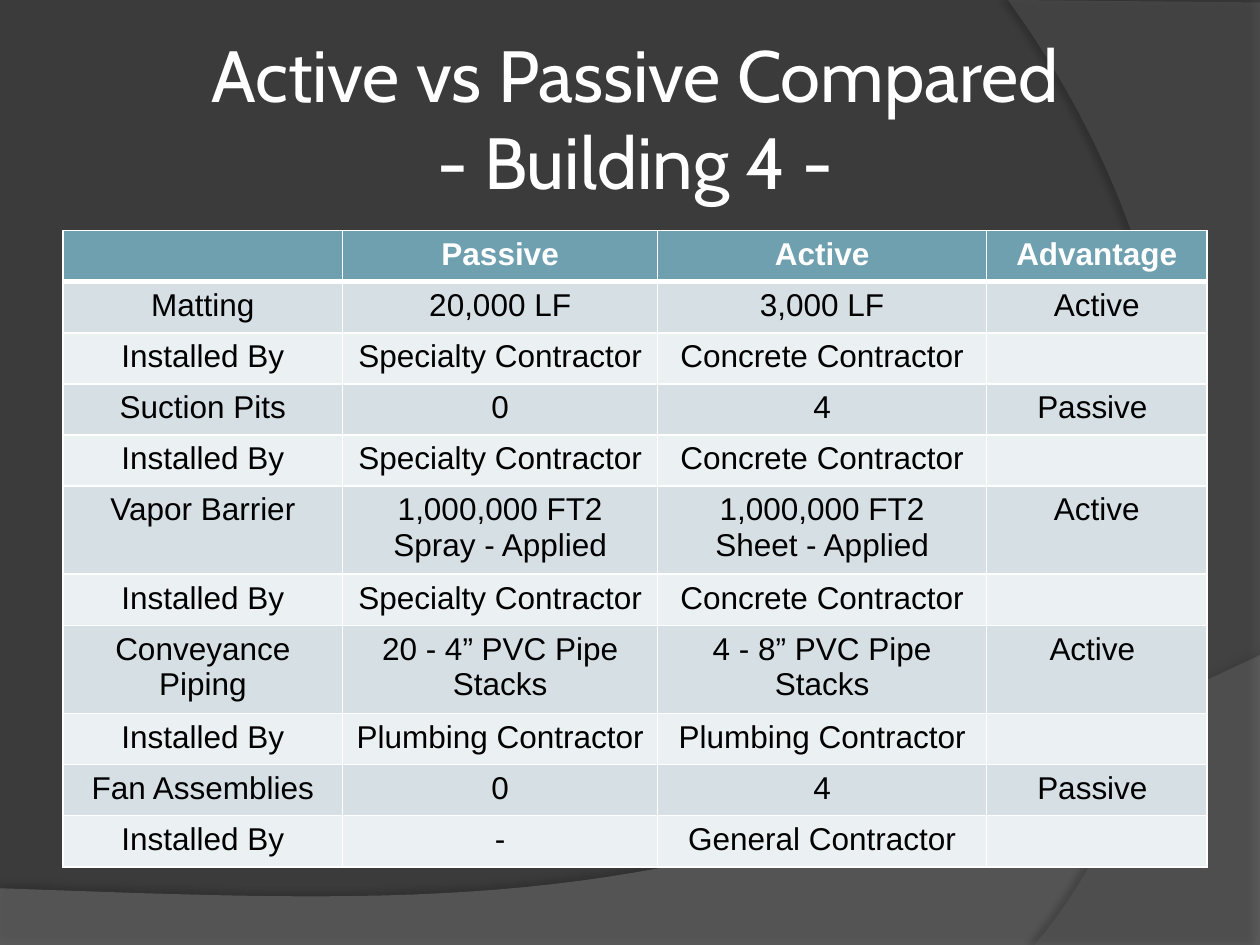
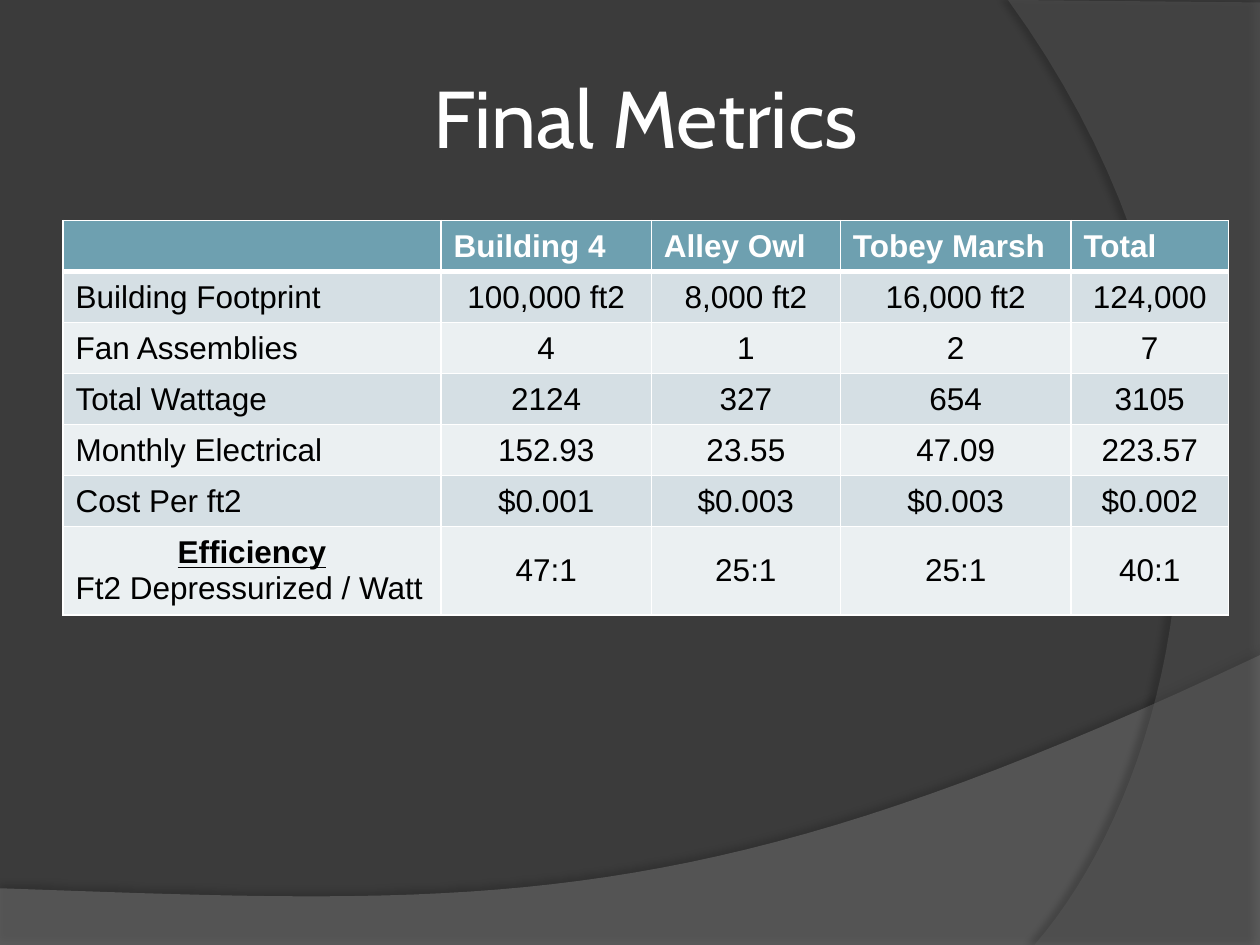
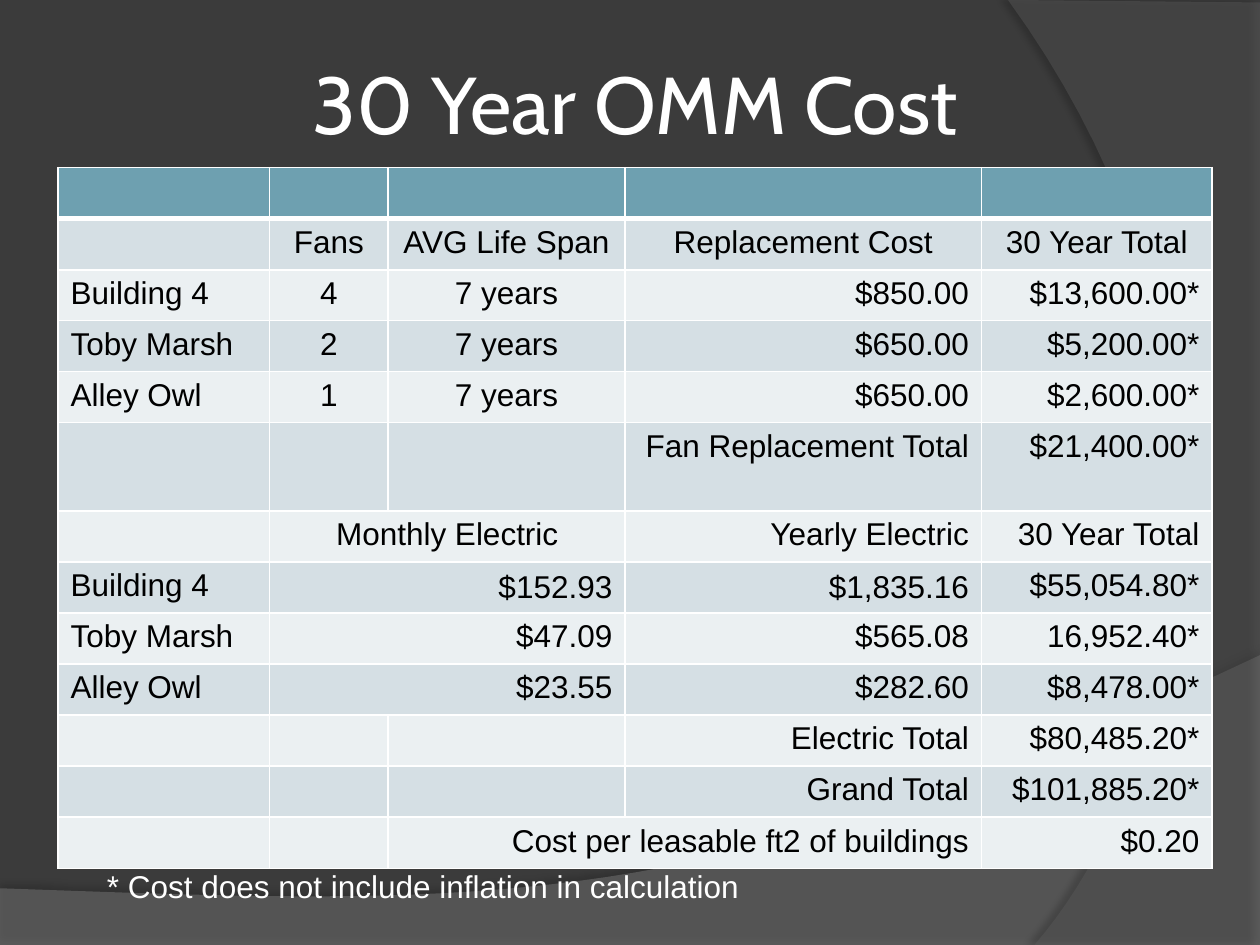
from dataclasses import dataclass

import pptx
import pptx.dml.color
import pptx.enum.text
import pptx.oxml
import pptx.oxml.ns
import pptx.util
from pptx.util import Inches

ALIGN = pptx.enum.text.PP_ALIGN
ANCHOR = pptx.enum.text.MSO_ANCHOR


@dataclass(frozen=True)
class Theme:
    background: str = "3B3B3B"
    lower_wave: str = "7F7F7F"
    side_wave: str = "5E5E5E"
    shadow: str = "000000"
    light_text: str = "FFFFFF"
    dark_text: str = "000000"
    header: str = "6EA0B0"
    bands: tuple = ("D5DFE4", "EBF0F2")
    border: str = "FFFFFF"
    thin_border: float = 1
    header_border: float = 3
    title_font: str = "Cabin"
    body_font: str = "Arial"
    title_size: float = 46
    long_title_size: float = 41.4
    body_size: float = 18
    tall_row: float = 0.7


THEME = Theme()

COMPARISON_ROWS = [
    ["", "Passive", "Active", "Advantage"],
    ["Matting", "20,000 LF", "3,000 LF", "Active"],
    ["Installed By", "Specialty Contractor", "Concrete Contractor", ""],
    ["Suction Pits", "0", "4", "Passive "],
    ["Installed By", "Specialty Contractor", "Concrete Contractor", ""],
    ["Vapor Barrier", "1,000,000 FT2\nSpray - Applied", "1,000,000 FT2\nSheet - Applied", "Active"],
    ["Installed By", "Specialty Contractor", "Concrete Contractor", ""],
    ["Conveyance Piping", "20 - 4” PVC Pipe Stacks", "4 - 8” PVC Pipe Stacks", "Active "],
    ["Installed By", "Plumbing Contractor", "Plumbing Contractor", ""],
    ["Fan Assemblies", "0", "4", "Passive "],
    ["Installed By", "-", "General Contractor", ""],
]

METRICS_ROWS = [
    ["", "Building 4", "Alley Owl", "Tobey Marsh", "Total"],
    ["Building Footprint", "100,000 ft2", "8,000 ft2", "16,000 ft2", "124,000"],
    ["Fan Assemblies", "4", "1", "2", "7"],
    ["Total Wattage", "2124", "327", "654", "3105"],
    ["Monthly Electrical", "152.93", "23.55", "47.09", "223.57"],
    ["Cost Per ft2", "$0.001", "$0.003", "$0.003", "$0.002"],
    ["", "47:1", "25:1", "25:1", "40:1"],
]

COST_ROWS = [
    ["", "", "", "", ""],
    ["", "Fans", "AVG Life Span", "Replacement Cost", "30 Year Total"],
    ["Building 4", "4", "7 years", "$850.00", "$13,600.00*"],
    ["Toby Marsh", "2", "7 years", "$650.00", "$5,200.00*"],
    ["Alley Owl", "1", "7 years", "$650.00", "$2,600.00*"],
    ["", "", "", "Fan Replacement Total", "$21,400.00*"],
    ["", "Monthly Electric", "", "Yearly Electric", "30 Year Total"],
    ["Building 4", "$152.93", "", "$1,835.16", "$55,054.80*"],
    ["Toby Marsh", "$47.09", "", "$565.08", "16,952.40*"],
    ["Alley Owl", "$23.55", "", "$282.60", "$8,478.00*"],
    ["", "", "", "Electric Total", "$80,485.20*"],
    ["", "", "", "Grand Total", "$101,885.20*"],
    ["", "", "Cost per leasable ft2 of buildings", "", "$0.20"],
]


def rgb(color):
    return pptx.dml.color.RGBColor.from_string(color)


def add_text(paragraph, text, color, size=THEME.body_size, font=THEME.body_font,
             bold=False, underline=False):
    """Add one run per line, with line breaks between them."""
    for index, line in enumerate(text.split("\n")):
        if index:
            paragraph.add_line_break()
        run = paragraph.add_run()
        run.text = line
        run.font.name = font
        run.font.size = pptx.util.Pt(size)
        run.font.bold = bold
        run.font.underline = underline
        run.font.color.rgb = rgb(color)


def curve_points(start, first_control, second_control, end, steps=40):
    """Return points along a cubic curve, in inches, without its start."""
    points = []
    for step in range(1, steps + 1):
        t = step / steps
        weights = ((1 - t) ** 3, 3 * t * (1 - t) ** 2, 3 * t * t * (1 - t), t ** 3)
        corners = (start, first_control, second_control, end)
        points.append(tuple(sum(w * corner[axis] for w, corner in zip(weights, corners))
                            for axis in (0, 1)))
    return points


def add_wave(slide, master, points, color, opacity, shadow_opacity, distance, direction):
    """Draw a translucent outline with a soft shadow and place it on the master."""
    scaled = [(Inches(x), Inches(y)) for x, y in points]
    builder = slide.shapes.build_freeform(*scaled[0])
    builder.add_line_segments(scaled[1:], close=True)
    wave = builder.convert_to_shape()
    wave.fill.solid()
    wave.fill.fore_color.rgb = rgb(color)
    wave.line.fill.background()
    wave.shadow.inherit = False
    namespace = pptx.oxml.ns.nsdecls("a")
    fill_color = wave.element.find(".//" + pptx.oxml.ns.qn("a:srgbClr"))
    fill_color.append(pptx.oxml.parse_xml(f'<a:alpha {namespace} val="{opacity * 1000}"/>'))
    effects = wave.element.find(".//" + pptx.oxml.ns.qn("a:effectLst"))
    effects.append(pptx.oxml.parse_xml(
        f'<a:outerShdw {namespace} blurRad="{pptx.util.Pt(4)}" '
        f'dist="{pptx.util.Pt(distance)}" dir="{direction * 60000}" algn="ctr" rotWithShape="0">'
        f'<a:srgbClr val="{THEME.shadow}"><a:alpha val="{shadow_opacity * 1000}"/></a:srgbClr>'
        '</a:outerShdw>'))
    first_placeholder = master.placeholders[0].element
    first_placeholder.addprevious(wave.element)


def decorate_master(presentation, slide):
    master = presentation.slide_master
    master.background.fill.solid()
    master.background.fill.fore_color.rgb = rgb(THEME.background)
    lower = [(0, 7.05), (0, 7.5), (10, 7.5), (10, 5.2)]
    lower += curve_points((10, 5.2), (5.59, 7.29), (3.91, 7.19), (0, 7.05))
    add_wave(slide, master, lower, THEME.lower_wave, 45, 35, 3.5, 270)
    side = [(10, 0.02), (10, 7.5), (8.21, 7.5)]
    side += curve_points((8.21, 7.5), (9.35, 6.19), (10.18, 3), (8, 0))
    add_wave(slide, master, side, THEME.side_wave, 40, 45, 4, 180)


def add_titled_slide(presentation, text, left, top, width, height, size=THEME.title_size):
    slide = presentation.slides.add_slide(presentation.slide_layouts[5])
    title = slide.shapes.title
    title.left, title.top = Inches(left), Inches(top)
    title.width, title.height = Inches(width), Inches(height)
    frame = title.text_frame
    frame.auto_size = pptx.enum.text.MSO_AUTO_SIZE.NONE
    frame.word_wrap = True
    frame.vertical_anchor = ANCHOR.MIDDLE
    frame.margin_left = frame.margin_right = Inches(0.05)
    frame.margin_top = frame.margin_bottom = Inches(0.05)
    paragraph = frame.paragraphs[0]
    paragraph.alignment = ALIGN.CENTER
    add_text(paragraph, text, THEME.light_text, size, THEME.title_font)
    return slide


def set_borders(cell, top, bottom):
    properties = cell._tc.get_or_add_tcPr()
    widths = {"L": THEME.thin_border, "R": THEME.thin_border, "T": top, "B": bottom}
    for side, width in widths.items():
        properties.append(pptx.oxml.parse_xml(
            f'<a:ln{side} {pptx.oxml.ns.nsdecls("a")} w="{pptx.util.Pt(width)}">'
            f'<a:solidFill><a:srgbClr val="{THEME.border}"/></a:solidFill></a:ln{side}>'))


def style_cell(cell, row):
    set_borders(cell,
                THEME.header_border if row == 1 else THEME.thin_border,
                THEME.header_border if row == 0 else THEME.thin_border)
    cell.fill.solid()
    cell.fill.fore_color.rgb = rgb(THEME.bands[(row - 1) % 2] if row else THEME.header)


def add_banded_table(slide, rows, left, top, height, column_widths, tall_rows, alignment,
                     anchor=ANCHOR.TOP):
    """Add a table; alignment(row, column) gives each cell's paragraph alignment."""
    frame = slide.shapes.add_table(len(rows), len(column_widths), Inches(left), Inches(top),
                                   Inches(sum(column_widths)), Inches(height))
    table = frame.table
    for column, width in zip(table.columns, column_widths):
        column.width = Inches(width)
    low_row = (height - THEME.tall_row * len(tall_rows)) / (len(rows) - len(tall_rows))
    for row, texts in enumerate(rows):
        table.rows[row].height = Inches(THEME.tall_row if row in tall_rows else low_row)
        for column, text in enumerate(texts):
            cell = table.cell(row, column)
            style_cell(cell, row)
            cell.vertical_anchor = anchor
            paragraph = cell.text_frame.paragraphs[0]
            paragraph.alignment = alignment(row, column)
            if text:
                add_text(paragraph, text, THEME.dark_text if row else THEME.light_text,
                         bold=row == 0)
    return table


def metrics_alignment(row, column):
    return ALIGN.CENTER if row and column else ALIGN.LEFT


def cost_alignment(row, column):
    if column == 0:
        return ALIGN.LEFT
    if row == 1 or (row <= 6 and column <= 2):
        return ALIGN.CENTER
    return ALIGN.RIGHT


def add_efficiency_label(cell):
    heading = cell.text_frame.paragraphs[0]
    heading.alignment = ALIGN.CENTER
    add_text(heading, "Efficiency", THEME.dark_text, bold=True, underline=True)
    unit = cell.text_frame.add_paragraph()
    unit.alignment = ALIGN.LEFT
    add_text(unit, "Ft2 Depressurized / Watt", THEME.dark_text)


def add_footnote(slide, text, left, top, width, height):
    box = slide.shapes.add_textbox(Inches(left), Inches(top), Inches(width), Inches(height))
    box.text_frame.word_wrap = False
    box.text_frame.auto_size = pptx.enum.text.MSO_AUTO_SIZE.SHAPE_TO_FIT_TEXT
    add_text(box.text_frame.paragraphs[0], text, THEME.light_text)


def build_comparison(presentation):
    slide = add_titled_slide(presentation, "Active vs Passive Compared\n- Building 4 -",
                             0.5, 0.3, 9.08, 1.25, THEME.long_title_size)
    add_banded_table(slide, COMPARISON_ROWS, 0.5, 1.83, 5.05, [2.22, 2.5, 2.61, 1.75], (5, 7),
                     lambda row, column: ALIGN.CENTER)
    return slide


def build_metrics(presentation):
    slide = add_titled_slide(presentation, "Final Metrics", 0.5, 0.3, 9.25, 1.25)
    table = add_banded_table(slide, METRICS_ROWS, 0.5, 1.75, 3.13, [3, 1.67, 1.5, 1.83, 1.25],
                             (6,), metrics_alignment, ANCHOR.MIDDLE)
    add_efficiency_label(table.cell(6, 0))


def build_cost(presentation):
    slide = add_titled_slide(presentation, "30 Year OMM Cost", 0.46, 0.29, 9.16, 1.05)
    table = add_banded_table(slide, COST_ROWS, 0.46, 1.33, 5.56, [1.68, 0.94, 1.88, 2.83, 1.83],
                             (5,), cost_alignment)
    for row, column in [(6, 1), (7, 1), (8, 1), (9, 1), (12, 2)]:
        table.cell(row, column).merge(table.cell(row, column + 1))
    for column in (1, 3):
        table.cell(7, column).vertical_anchor = ANCHOR.MIDDLE
    add_footnote(slide, "* Cost does not include inflation in calculation", 0.75, 6.83, 5.26, 0.4)


def main():
    presentation = pptx.Presentation()
    presentation.slide_width = Inches(10)
    presentation.slide_height = Inches(7.5)
    first_slide = build_comparison(presentation)
    decorate_master(presentation, first_slide)
    build_metrics(presentation)
    build_cost(presentation)
    presentation.save("out.pptx")


if __name__ == "__main__":
    main()
